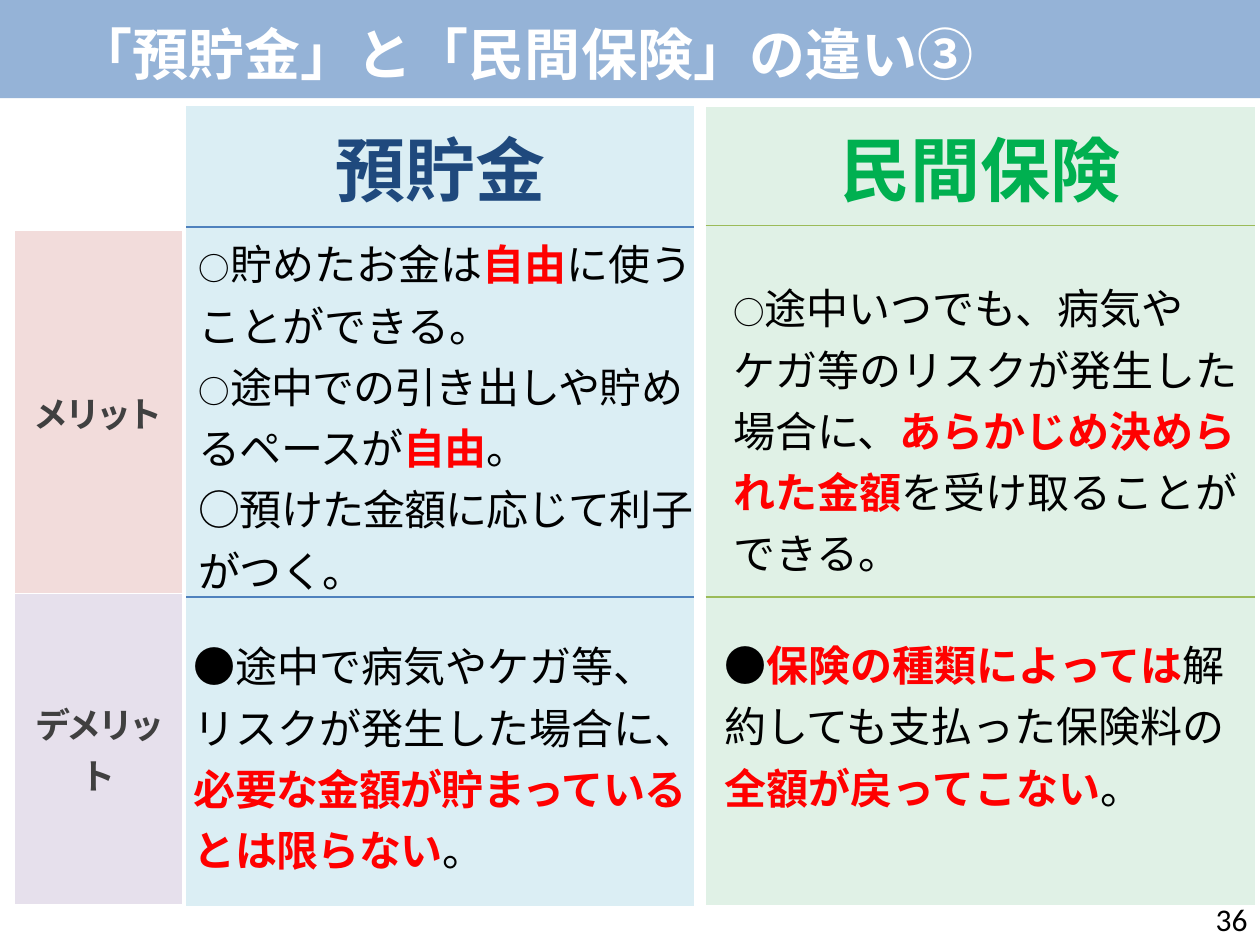
from lxml import etree
from pptx import Presentation
from pptx.dml.color import RGBColor
from pptx.enum.shapes import MSO_SHAPE
from pptx.enum.text import MSO_ANCHOR, MSO_AUTO_SIZE, PP_ALIGN
from pptx.oxml.ns import qn
from pptx.util import Inches, Pt

RECTANGLE = MSO_SHAPE.RECTANGLE
MIDDLE = MSO_ANCHOR.MIDDLE
GROW = MSO_AUTO_SIZE.SHAPE_TO_FIT_TEXT
LEFT, CENTER, RIGHT = PP_ALIGN.LEFT, PP_ALIGN.CENTER, PP_ALIGN.RIGHT

JAPANESE = "Noto Sans CJK JP"
COLORS = {
    "band": "95B3D7", "white": "FFFFFF", "black": "000000", "red": "FF0000",
    "savings": "DBEEF4", "savings_head": "1F497D", "savings_rule": "4F81BD",
    "insurance": "E0F1E6", "insurance_head": "00B050", "insurance_rule": "9BBB59",
    "merit": "F2DCDB", "demerit": "E6E0EC", "label": "404040",
}

# Each paragraph is a list of runs: text, role, letter spacing in points
SAVINGS_MERITS = [
    [("○", "mark", 0), ("貯めたお金は", "plain", 0), ("自由", "key", 0),
     ("に使うことができる。", "plain", 0)],
    [("○", "mark", 0), ("途中での引き出しや貯めるペースが", "plain", -0.5),
     ("自由", "key", -0.5), ("。", "plain", -0.5)],
    [("○預けた金額に応じて利子がつく。", "plain", -0.5)],
]
SAVINGS_DEMERITS = [
    [("●途中で病気やケガ等、リスクが発生した場合に、", "plain", 0),
     ("必要な金額が貯まっているとは限らない", "key", -0.4), ("。", "plain", -0.4)],
]
INSURANCE_MERITS = [
    [("○", "mark", 0),
     ("途中いつでも、病気や　ケガ等のリスクが発生した場合に、", "plain", 0),
     ("あらかじめ決められた金額", "key", 0), ("を受け取ることができる。", "plain", 0)],
]
INSURANCE_DEMERITS = [
    [("●", "plain", 0), ("保険の種類によっては", "key", 0),
     ("解約しても支払った保険料の", "plain", 0),
     ("全額が戻ってこない", "key", 0), ("。", "plain", 0)],
]


def rgb(name):
    return RGBColor.from_string(COLORS[name])


def style_font(font, size, color, bold=False, face=JAPANESE, spacing=0):
    font.size = Pt(size)
    font.bold = bold
    font.color.rgb = rgb(color)
    font.name = face
    properties = font._element
    etree.SubElement(properties, qn("a:ea")).set("typeface", face)
    if spacing:
        properties.set("spc", str(round(spacing * 100)))


def write_line(frame, text, align, **style):
    """Fill a frame with one evenly styled, vertically centred line."""
    frame.word_wrap = True
    frame.vertical_anchor = MIDDLE
    paragraph = frame.paragraphs[0]
    paragraph.text = text
    paragraph.alignment = align
    style_font(paragraph.font, **style)


def add_band(slide):
    band = slide.shapes.add_shape(RECTANGLE, 0, 0, Inches(10), Inches(0.78))
    band.shadow.inherit = False
    band.fill.solid()
    band.fill.fore_color.rgb = rgb("band")
    band.line.fill.background()


def add_title(slide, text):
    title = slide.shapes.title
    title.left, title.top = Inches(0.51), Inches(0.03)
    title.width, title.height = Inches(7.65), Inches(0.79)
    write_line(title.text_frame, text, LEFT, size=32, color="white", bold=True)
    # Bring the title in front of the band
    title.element.getparent().append(title.element)


def set_borders(cell, colors):
    """Draw the listed sides at 1 pt and leave the others without a line."""
    properties = cell._tc.get_or_add_tcPr()
    for side in "LRTB":
        line = etree.SubElement(properties, qn(f"a:ln{side}"), w=str(Pt(1)))
        if side in colors:
            fill = etree.SubElement(line, qn("a:solidFill"))
            etree.SubElement(fill, qn("a:srgbClr"), val=COLORS[colors[side]])
        else:
            etree.SubElement(line, qn("a:noFill"))


def add_column(slide, left, top, width, heights, fills, rule, outline=False):
    """Add a one-column table with rules between its rows."""
    table = slide.shapes.add_table(
        len(heights), 1, Inches(left), Inches(top),
        Inches(width), Inches(sum(heights))).table
    table.first_row = table.horz_banding = False
    last = len(heights) - 1
    for index, (height, fill) in enumerate(zip(heights, fills)):
        table.rows[index].height = Inches(height)
        cell = table.cell(index, 0)
        sides = "LR" if outline else ""
        sides += "T" if outline or index > 0 else ""
        sides += "B" if outline or index < last else ""
        set_borders(cell, {side: rule for side in sides})
        cell.fill.solid()
        cell.fill.fore_color.rgb = rgb(fill)
    return table


def write_cell(cell, text, **style):
    write_line(cell.text_frame, text, CENTER, bold=True, **style)
    cell.vertical_anchor = MIDDLE


def add_option(slide, name, left, top, width, heights, heading):
    table = add_column(slide, left, top, width, heights, [name] * 3, f"{name}_rule")
    write_cell(table.cell(0, 0), heading, size=40, color=f"{name}_head")


def add_row_labels(slide):
    labels = {"merit": "メリット", "demerit": "デメリット"}
    table = add_column(slide, 0.11, 1.83, 1.34, [2.88, 2.47], labels, "white", True)
    for row, text in enumerate(labels.values()):
        write_cell(table.cell(row, 0), text, size=20, color="label", spacing=-2.1)


def add_points(slide, left, top, width, height, points):
    box = slide.shapes.add_textbox(
        Inches(left), Inches(top), Inches(width), Inches(height))
    frame = box.text_frame
    frame.word_wrap = True
    frame.auto_size = GROW
    for index, runs in enumerate(points):
        paragraph = frame.add_paragraph() if index else frame.paragraphs[0]
        paragraph.line_spacing = Pt(35)
        for text, role, spacing in runs:
            run = paragraph.add_run()
            run.text = text
            style_font(run.font, 18 if role == "mark" else 24,
                       "red" if role == "key" else "black",
                       bold=role == "key", spacing=spacing)


def add_page_number(slide, number):
    box = slide.shapes.add_textbox(
        Inches(7.75), Inches(7.09), Inches(2.25), Inches(0.4))
    write_line(box.text_frame, number, RIGHT, size=18, color="black", face="Calibri")


def main():
    prs = Presentation()
    prs.slide_width, prs.slide_height = Inches(10), Inches(7.5)
    slide = prs.slides.add_slide(prs.slide_layouts[5])

    # Comparison columns and their row labels
    add_band(slide)
    add_option(slide, "savings", 1.48, 0.84, 4.03, [0.96, 2.94, 2.45], "預貯金")
    add_option(slide, "insurance", 5.6, 0.85, 4.36, [0.94, 2.95, 2.44], "民間保険")
    add_row_labels(slide)

    # Merits and demerits
    add_points(slide, 1.48, 1.76, 4.17, 3, SAVINGS_MERITS)
    add_points(slide, 1.44, 4.95, 4.17, 2.02, SAVINGS_DEMERITS)
    add_points(slide, 5.72, 2.11, 4.37, 2.01, INSURANCE_MERITS)
    add_points(slide, 5.65, 4.94, 4.37, 1.52, INSURANCE_DEMERITS)

    # Title and page number
    add_title(slide, "「預貯金」と「民間保険」の違い③")
    add_page_number(slide, "36")
    prs.save("out.pptx")


if __name__ == "__main__":
    main()
